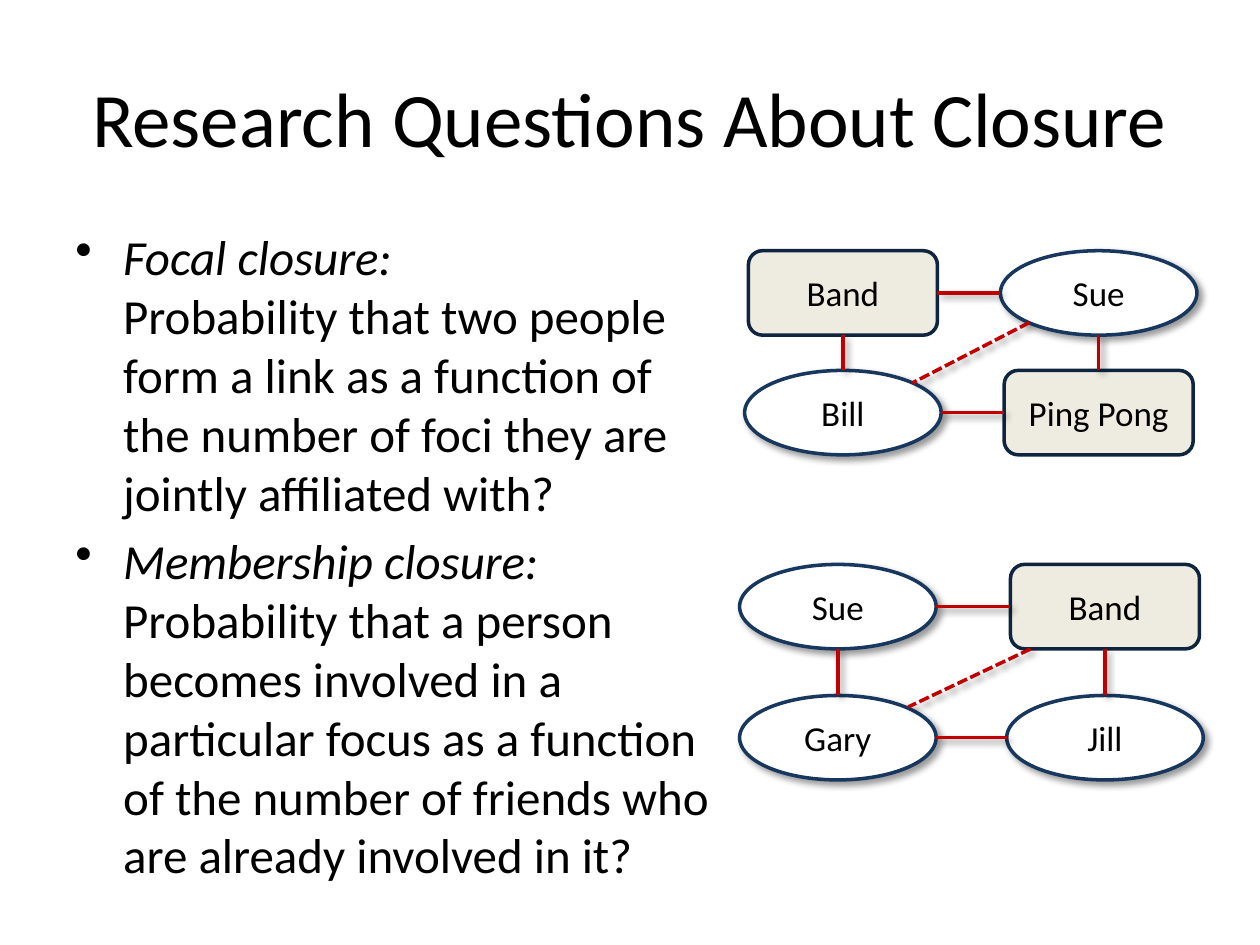
from dataclasses import dataclass

from lxml import etree
from pptx import Presentation
from pptx import util as u
from pptx.dml.color import RGBColor
from pptx.enum import dml, shapes, text
from pptx.oxml import ns


@dataclass(frozen=True)
class Theme:
    font: str = "Calibri"
    title_size: int = 44
    body_size: int = 28
    node_size: int = 20
    line_width: int = 2
    ink: RGBColor = RGBColor.from_string("000000")
    focus_fill: RGBColor = RGBColor.from_string("EEECE1")
    focus_line: RGBColor = RGBColor.from_string("0F243E")
    person_fill: RGBColor = RGBColor.from_string("FFFFFF")
    person_line: RGBColor = RGBColor.from_string("17375E")
    link: RGBColor = RGBColor.from_string("C00000")


THEME = Theme()
TOP, LEFT, BOTTOM, RIGHT = range(4)
HEIGHT = 0.67
FOCUS_WIDTH = 1.5
PERSON_WIDTH = 1.56


@dataclass(frozen=True)
class Node:
    label: str
    center: float
    top: float
    is_focus: bool = False

    @property
    def width(self) -> float:
        return FOCUS_WIDTH if self.is_focus else PERSON_WIDTH

    @property
    def left(self) -> float:
        return self.center - self.width / 2

    def side(self, index: int) -> tuple[float, float]:
        middle = self.top + HEIGHT / 2
        return (
            (self.center, self.top),
            (self.left, middle),
            (self.center, self.top + HEIGHT),
            (self.left + self.width, middle),
        )[index]


@dataclass(frozen=True)
class Network:
    nodes: tuple[Node, Node, Node, Node]
    closure_start: tuple[float, float]
    closure_end: tuple[float, float]


@dataclass(frozen=True)
class Question:
    name: str
    lines: tuple[str, ...]


SIDE_LINKS = ((0, RIGHT, 1, LEFT), (0, BOTTOM, 2, TOP), (1, BOTTOM, 3, TOP), (2, RIGHT, 3, LEFT))

NETWORKS = (
    Network(
        (
            Node("Band", 6.69, 1.99, True),
            Node("Sue", 8.72, 1.99),
            Node("Bill", 6.69, 2.94),
            Node("Ping Pong", 8.72, 2.94, True),
        ),
        (8.17, 2.56),
        (7.24, 3.04),
    ),
    Network(
        (
            Node("Sue", 6.65, 4.48),
            Node("Band", 8.77, 4.48, True),
            Node("Gary", 6.65, 5.52),
            Node("Jill", 8.77, 5.52),
        ),
        (8.18, 5.15),
        (7.21, 5.61),
    ),
)

QUESTIONS = (
    Question(
        "Focal closure: ",
        (
            "Probability that two people ",
            "form a link as a function of ",
            "the number of foci they are ",
            "jointly affiliated with?",
        ),
    ),
    Question(
        "Membership closure: ",
        (
            "Probability that a person ",
            "becomes involved in a ",
            "particular focus as a function ",
            "of the number of friends who ",
            "are already involved in it?",
        ),
    ),
)


def style_paragraph(paragraph, size: int, alignment) -> None:
    paragraph.alignment = alignment
    paragraph.font.name = THEME.font
    paragraph.font.size = u.Pt(size)
    paragraph.font.color.rgb = THEME.ink


def add_shadow(effects) -> None:
    shadow = etree.SubElement(
        effects, ns.qn("a:outerShdw"),
        blurRad=str(u.Pt(4)), dist=str(u.Pt(3)), dir="2700000", algn="tl", rotWithShape="0",
    )
    color = etree.SubElement(shadow, ns.qn("a:srgbClr"), val="000000")
    etree.SubElement(color, ns.qn("a:alpha"), val="40000")


def add_node(slide, node: Node):
    kind = shapes.MSO_SHAPE.ROUNDED_RECTANGLE if node.is_focus else shapes.MSO_SHAPE.OVAL
    shape = slide.shapes.add_shape(
        kind, u.Inches(node.left), u.Inches(node.top), u.Inches(node.width), u.Inches(HEIGHT)
    )
    shape.fill.solid()
    shape.fill.fore_color.rgb = THEME.focus_fill if node.is_focus else THEME.person_fill
    shape.line.color.rgb = THEME.focus_line if node.is_focus else THEME.person_line
    shape.line.width = u.Pt(THEME.line_width)
    shape.shadow.inherit = False
    if not node.is_focus:
        add_shadow(shape.element.spPr.find(ns.qn("a:effectLst")))
    shape.text_frame.text = node.label
    shape.text_frame.vertical_anchor = text.MSO_ANCHOR.MIDDLE
    style_paragraph(shape.text_frame.paragraphs[0], THEME.node_size, text.PP_ALIGN.CENTER)
    return shape


def add_link(slide, start: tuple[float, float], end: tuple[float, float], dashed: bool = False):
    connector = slide.shapes.add_connector(
        shapes.MSO_CONNECTOR.STRAIGHT, *(u.Inches(value) for value in start + end)
    )
    connector.line.color.rgb = THEME.link
    connector.line.width = u.Pt(THEME.line_width)
    if dashed:
        connector.line.dash_style = dml.MSO_LINE.SQUARE_DOT
    add_shadow(etree.SubElement(connector.element.spPr, ns.qn("a:effectLst")))
    return connector


def add_network(slide, network: Network) -> None:
    node_shapes = [add_node(slide, node) for node in network.nodes]
    for first, first_side, second, second_side in SIDE_LINKS:
        start, end = network.nodes[first], network.nodes[second]
        connector = add_link(slide, start.side(first_side), end.side(second_side))
        if start.is_focus:
            connector.begin_connect(node_shapes[first], first_side)
        if end.is_focus:
            connector.end_connect(node_shapes[second], second_side)
    add_link(slide, network.closure_start, network.closure_end, dashed=True)


def add_question(paragraph, question: Question) -> None:
    style_paragraph(paragraph, THEME.body_size, text.PP_ALIGN.LEFT)
    paragraph.space_before = u.Pt(THEME.body_size * 0.2)
    properties = paragraph._p.get_or_add_pPr()
    properties.set("marL", str(u.Inches(0.38)))
    properties.set("indent", str(u.Inches(-0.38)))
    bullet = etree.Element(ns.qn("a:buChar"), char="•")
    properties.find(ns.qn("a:defRPr")).addprevious(bullet)
    name = paragraph.add_run()
    name.text = question.name
    name.font.italic = True
    for line in question.lines:
        paragraph.add_line_break()
        paragraph.add_run().text = line


def main() -> None:
    presentation = Presentation()
    presentation.slide_width, presentation.slide_height = u.Inches(10), u.Inches(7.5)
    slide = presentation.slides.add_slide(presentation.slide_layouts[5])
    title = slide.shapes.title
    title.left, title.top, title.width, title.height = map(u.Inches, (0.5, 0.3, 9, 1.25))
    title.text_frame.text = "Research Questions About Closure"
    title.text_frame.vertical_anchor = text.MSO_ANCHOR.MIDDLE
    style_paragraph(title.text_frame.paragraphs[0], THEME.title_size, text.PP_ALIGN.CENTER)
    frame = slide.shapes.add_textbox(*map(u.Inches, (0.5, 1.75, 9, 5.08))).text_frame
    frame.word_wrap = True
    add_question(frame.paragraphs[0], QUESTIONS[0])
    for question in QUESTIONS[1:]:
        add_question(frame.add_paragraph(), question)
    for network in NETWORKS:
        add_network(slide, network)
    presentation.save("out.pptx")


if __name__ == "__main__":
    main()
